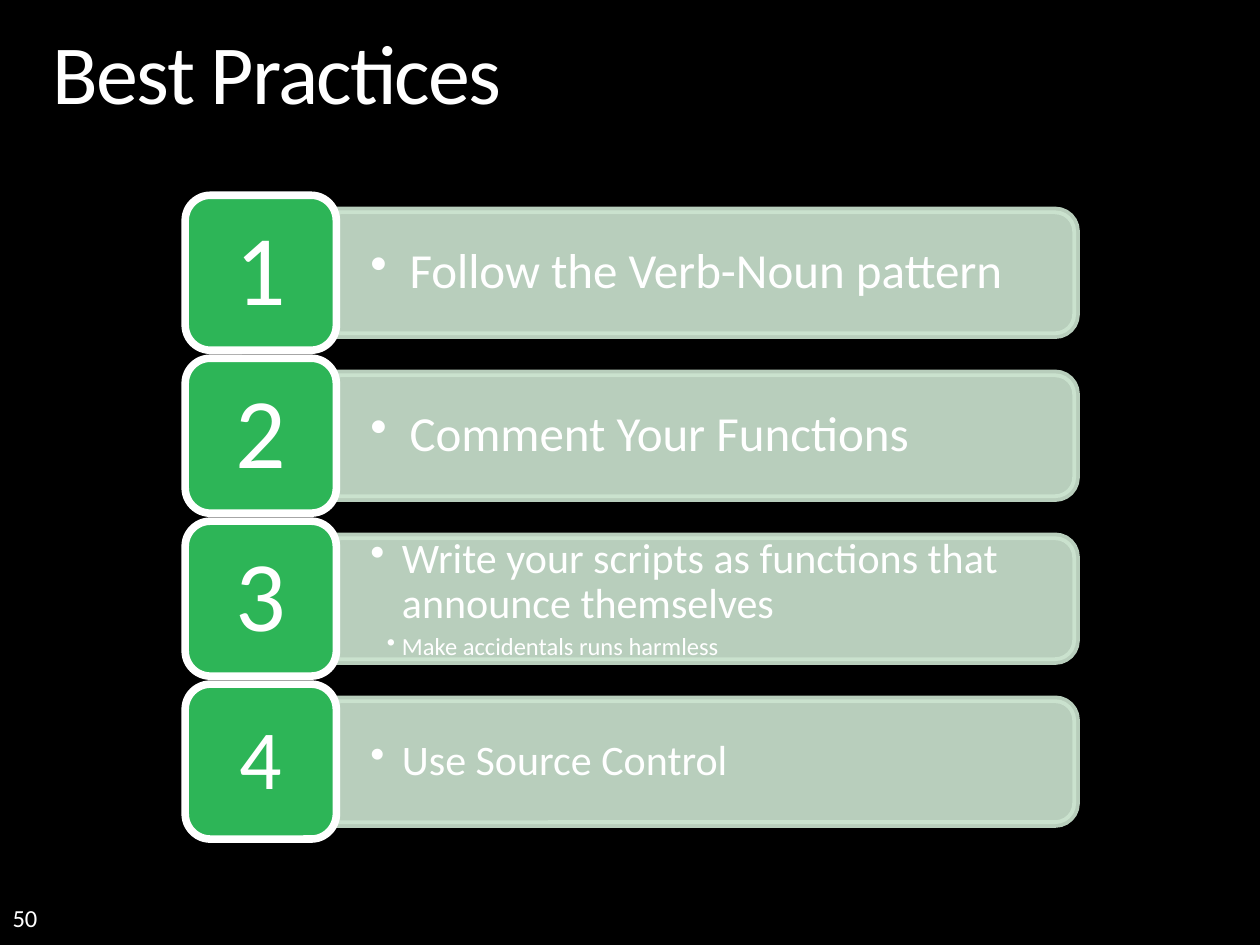
from dataclasses import dataclass

from lxml import etree
from pptx import Presentation
from pptx.dml.color import RGBColor
from pptx.enum import shapes, text
from pptx.oxml import ns
from pptx.util import Inches, Pt


@dataclass(frozen=True)
class Theme:
    font: str = "Calibri"
    background: RGBColor = RGBColor(0x00, 0x00, 0x00)
    ink: RGBColor = RGBColor(0xFF, 0xFF, 0xFF)
    tile: RGBColor = RGBColor(0x2D, 0xB5, 0x57)
    bar: RGBColor = RGBColor(0xCD, 0xE5, 0xD1)
    bar_opacity: int = 90
    outline: float = 4.33
    title: int = 48
    page: int = 14
    line_spacing: float = 0.9


@dataclass(frozen=True)
class Bullet:
    wording: str
    size: int
    left: float
    hanging: float
    level: int = 1


@dataclass(frozen=True)
class Practice:
    number: str
    number_size: int
    number_inset: float
    bullets: tuple[Bullet, ...]


@dataclass(frozen=True)
class Box:
    left: float
    top: float
    width: float
    height: float

    def lengths(self) -> tuple:
        return tuple(map(Inches, (self.left, self.top, self.width, self.height)))


THEME = Theme()
FIRST_TOP, LAST_TOP = 1.55, 5.43
PRACTICES = (
    Practice("1", 57, 0.12, (Bullet("Follow the Verb-Noun pattern", 28, 0.31, 0.31),)),
    Practice("2", 57, 0.12, (Bullet("Comment Your Functions", 28, 0.31, 0.31),)),
    Practice("3", 57, 0.12, (
        Bullet("Write your scripts as functions that announce themselves", 24, 0.25, 0.25),
        Bullet("Make accidentals runs harmless", 14, 0.25, 0.12, level=2),
    )),
    Practice("4", 48, 0.1, (Bullet("Use Source Control", 24, 0.25, 0.25),)),
)


def format_frame(frame, anchor, horizontal: float = 0, vertical: float = 0) -> None:
    frame.word_wrap = True
    frame.auto_size = text.MSO_AUTO_SIZE.NONE
    frame.vertical_anchor = anchor
    frame.margin_left = frame.margin_right = Inches(horizontal)
    frame.margin_top = frame.margin_bottom = Inches(vertical)


def format_paragraph(paragraph, size: int, alignment=text.PP_ALIGN.LEFT) -> None:
    paragraph.alignment = alignment
    paragraph.line_spacing = THEME.line_spacing
    for run in paragraph.runs:
        run.font.name = THEME.font
        run.font.size = Pt(size)
        run.font.color.rgb = THEME.ink


def set_opacity(shape, percent: int) -> None:
    for color in shape._element.spPr.iter(ns.qn("a:srgbClr")):
        etree.SubElement(color, ns.qn("a:alpha"), val=str(percent * 1000))


def add_panel(slide, kind, box: Box, fill: RGBColor, line: RGBColor):
    shape = slide.shapes.add_shape(kind, *box.lengths())
    shape.shadow.inherit = False
    shape.fill.solid()
    shape.fill.fore_color.rgb = fill
    shape.line.color.rgb = line
    shape.line.width = Pt(THEME.outline)
    return shape


def add_label(slide, box: Box, wording: str, size: int, anchor, alignment, inset: float = 0) -> None:
    frame = slide.shapes.add_textbox(*box.lengths()).text_frame
    format_frame(frame, anchor, 2 * inset, inset)
    frame.text = wording
    format_paragraph(frame.paragraphs[0], size, alignment)


def add_bullets(slide, box: Box, bullets: tuple[Bullet, ...]) -> None:
    frame = slide.shapes.add_textbox(*box.lengths()).text_frame
    format_frame(frame, text.MSO_ANCHOR.MIDDLE, 0.27, 0.14)
    frame.text = "\n".join(bullet.wording for bullet in bullets)
    for paragraph, bullet in zip(frame.paragraphs, bullets):
        paragraph.level = bullet.level
        paragraph.space_after = Pt(round(bullet.size * 0.15, 1))
        format_paragraph(paragraph, bullet.size)
        properties = paragraph._p.get_or_add_pPr()
        properties.set("marL", str(Inches(bullet.left)))
        properties.set("indent", str(-Inches(bullet.hanging)))
        etree.SubElement(properties, ns.qn("a:buChar"), char="•")


def add_practice(slide, practice: Practice, top: float) -> None:
    bar = add_panel(slide, shapes.MSO_SHAPE.ROUND_2_SAME_RECTANGLE,
                    Box(5.11, top - 2.32, 0.99, 5.87), THEME.bar, THEME.bar)
    bar.rotation = 90
    set_opacity(bar, THEME.bar_opacity)
    add_bullets(slide, Box(2.67, top + 0.17, 5.82, 0.89), practice.bullets)
    add_panel(slide, shapes.MSO_SHAPE.ROUNDED_RECTANGLE,
              Box(1.47, top, 1.2, 1.23), THEME.tile, THEME.ink)
    add_label(slide, Box(1.53, top + 0.06, 1.08, 1.12), practice.number, practice.number_size,
              text.MSO_ANCHOR.MIDDLE, text.PP_ALIGN.CENTER, practice.number_inset)


def add_title(slide, wording: str) -> None:
    title = slide.shapes.title
    title.left, title.top, title.width, title.height = Box(0.42, 0.25, 9.16, 0.73).lengths()
    format_frame(title.text_frame, text.MSO_ANCHOR.TOP)
    title.text_frame.text = wording
    paragraph = title.text_frame.paragraphs[0]
    format_paragraph(paragraph, THEME.title)
    for run in paragraph.runs:
        run.font._element.set("spc", "-100")


def main() -> None:
    presentation = Presentation()
    presentation.slide_width, presentation.slide_height = Inches(10), Inches(7.5)
    slide = presentation.slides.add_slide(presentation.slide_layouts.get_by_name("Title Only"))
    slide.background.fill.solid()
    slide.background.fill.fore_color.rgb = THEME.background

    add_label(slide, Box(0.1, 7, 2.33, 0.4), "50", THEME.page,
              text.MSO_ANCHOR.BOTTOM, text.PP_ALIGN.LEFT)
    add_title(slide, "Best Practices")
    pitch = (LAST_TOP - FIRST_TOP) / (len(PRACTICES) - 1)
    for index, practice in enumerate(PRACTICES):
        add_practice(slide, practice, FIRST_TOP + index * pitch)

    presentation.save("out.pptx")


if __name__ == "__main__":
    main()
